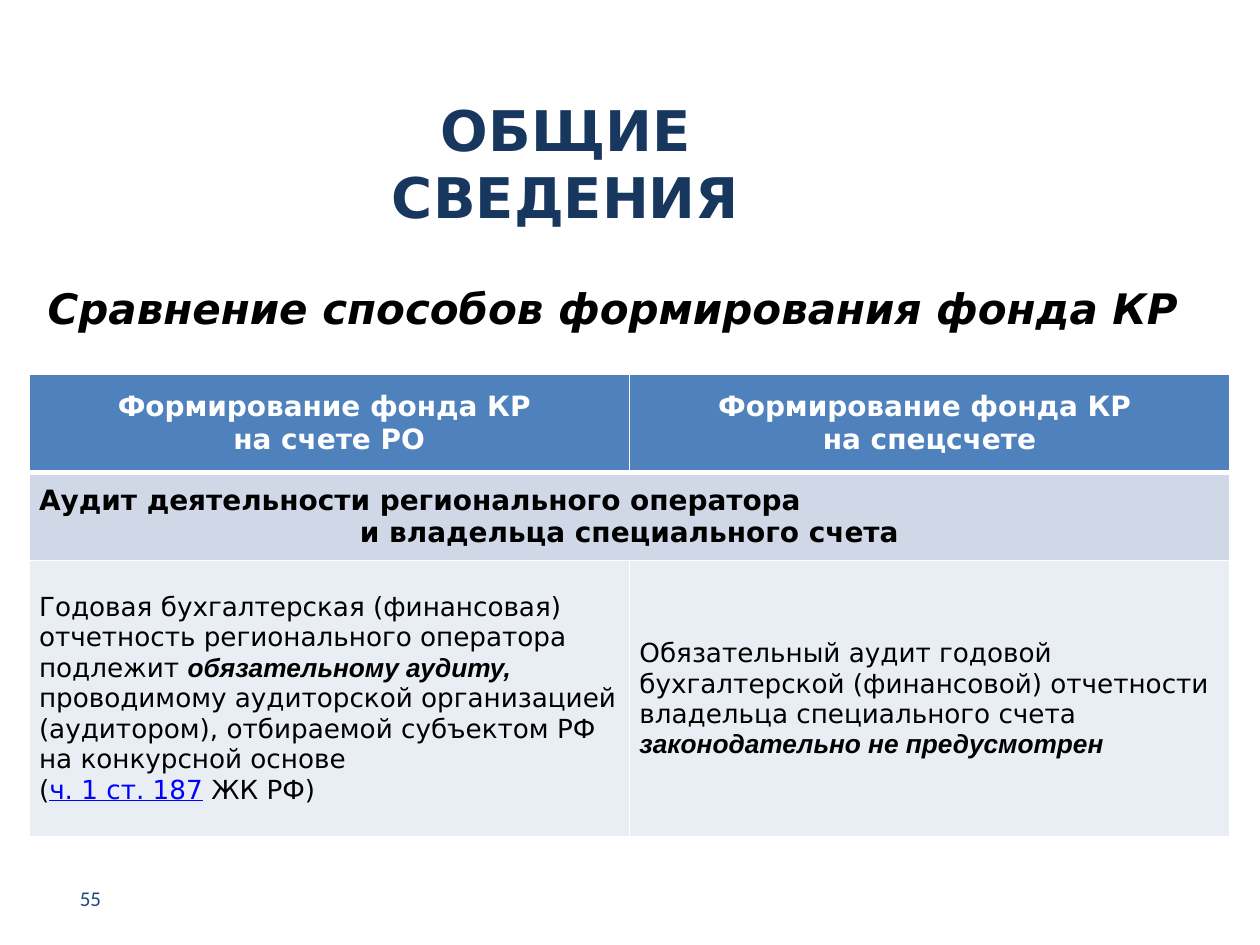
from lxml import etree
from pptx import Presentation
from pptx.dml.color import RGBColor
from pptx.enum.text import MSO_ANCHOR, PP_ALIGN
from pptx.oxml.ns import qn
from pptx.util import Inches, Pt

LEFT, CENTER, RIGHT = PP_ALIGN.LEFT, PP_ALIGN.CENTER, PP_ALIGN.RIGHT
TOP, MIDDLE = MSO_ANCHOR.TOP, MSO_ANCHOR.MIDDLE

COLORS = {
    "title": "17375E", "text": "000000", "white": "FFFFFF", "number": "1F497D",
    "link": "0000FF", "header": "4F81BD", "section": "D0D8E8", "body": "E9EDF4",
}
MAIN_FONT, ACCENT_FONT = "DejaVu Sans", "Arial"


def style_font(font, name, size, color, bold=False, italic=False):
    font.name, font.size = name, Pt(size)
    font.bold, font.italic = bold, italic
    font.color.rgb = RGBColor.from_string(COLORS[color])


def set_border(cell, position, tag, width):
    line = etree.Element(qn(tag), w=str(Pt(width)))
    fill = etree.SubElement(line, qn("a:solidFill"))
    etree.SubElement(fill, qn("a:srgbClr"), val=COLORS["white"])
    cell._tc.get_or_add_tcPr().insert(position, line)


deck = Presentation()
deck.slide_width, deck.slide_height = Inches(10), Inches(7.5)
page = deck.slides.add_slide(deck.slide_layouts[6])

# Title, subtitle and page number
text_boxes = [
    ("ОБЩИЕ СВЕДЕНИЯ", (2.42, 0.55, 4.14, 1.48), MIDDLE, CENTER,
     (MAIN_FONT, 32, "title", True)),
    ("Сравнение способов формирования фонда КР", (0.28, 2.19, 9.57, 4.84), TOP, LEFT,
     (MAIN_FONT, 24, "text", True, True)),
    ("55", (0.35, 6.93, 0.55, 0.4), MIDDLE, RIGHT,
     ("Calibri", 12, "number")),
]
for text, place, anchor, align, style in text_boxes:
    box = page.shapes.add_textbox(*[Inches(value) for value in place])
    frame = box.text_frame
    frame.word_wrap = True
    frame.vertical_anchor = anchor
    para = frame.paragraphs[0]
    para.text, para.alignment = text, align
    style_font(para.font, *style)

# Comparison table
table = page.shapes.add_table(
    3, 2, Inches(0.23), Inches(2.97), Inches(9.53), Inches(3.67)).table
for column in table.columns:
    column.width = Inches(4.765)
for row, height in zip(table.rows, (0.78, 0.7, 2.19)):
    row.height = Inches(height)
table.cell(1, 0).merge(table.cell(1, 1))

row_fills = ("header", "section", "body")
for row_index, row in enumerate(table.rows):
    for cell in row.cells:
        cell.fill.solid()
        cell.fill.fore_color.rgb = RGBColor.from_string(COLORS[row_fills[row_index]])
        cell.vertical_anchor = MIDDLE
        cell.margin_left = cell.margin_right = Inches(0.08)
        cell.margin_top = cell.margin_bottom = Inches(0.04)
        borders = {"a:lnL": 1, "a:lnR": 1,
                   "a:lnT": 3 if row_index == 1 else 1,
                   "a:lnB": 3 if row_index == 0 else 1}
        for position, (tag, width) in enumerate(borders.items()):
            set_border(cell, position, tag, width)

# Header and section rows: one style per paragraph
headings = [
    (0, 0, "white", [("Формирование фонда КР ", CENTER), ("на счете РО", CENTER)]),
    (0, 1, "white", [("Формирование фонда КР ", CENTER), ("на спецсчете", CENTER)]),
    (1, 0, "text", [("Аудит деятельности регионального оператора", LEFT),
                    ("и владельца специального счета", CENTER)]),
]
for row_index, column_index, color, lines in headings:
    frame = table.cell(row_index, column_index).text_frame
    for index, (text, align) in enumerate(lines):
        para = frame.paragraphs[0] if index == 0 else frame.add_paragraph()
        para.text, para.alignment = text, align
        style_font(para.font, MAIN_FONT, 16, color, True)

# Body row: plain, accented and linked spans
details = [
    [
        [("Годовая бухгалтерская (финансовая) отчетность регионального оператора подлежит ",
          "plain"),
         ("обязательному аудиту, ", "accent"),
         ("проводимому аудиторской организацией (аудитором), "
          "отбираемой субъектом РФ на конкурсной основе", "plain")],
        [("(", "plain"), ("ч. 1 ст. 187", "link"), (" ЖК РФ)", "plain")],
    ],
    [
        [("Обязательный аудит годовой бухгалтерской (финансовой) отчетности "
          "владельца специального счета ", "plain"),
         ("законодательно не предусмотрен", "accent")],
    ],
]
span_styles = {
    "plain": (MAIN_FONT, 15, "text"),
    "accent": (ACCENT_FONT, 15, "text", True, True),
    "link": (MAIN_FONT, 15, "link"),
}
for column_index, paragraphs in enumerate(details):
    frame = table.cell(2, column_index).text_frame
    for index, spans in enumerate(paragraphs):
        para = frame.paragraphs[0] if index == 0 else frame.add_paragraph()
        para.alignment = LEFT
        for text, kind in spans:
            span = para.add_run()
            span.text = text
            style_font(span.font, *span_styles[kind])
            span.font.underline = kind == "link"

deck.save("out.pptx")
